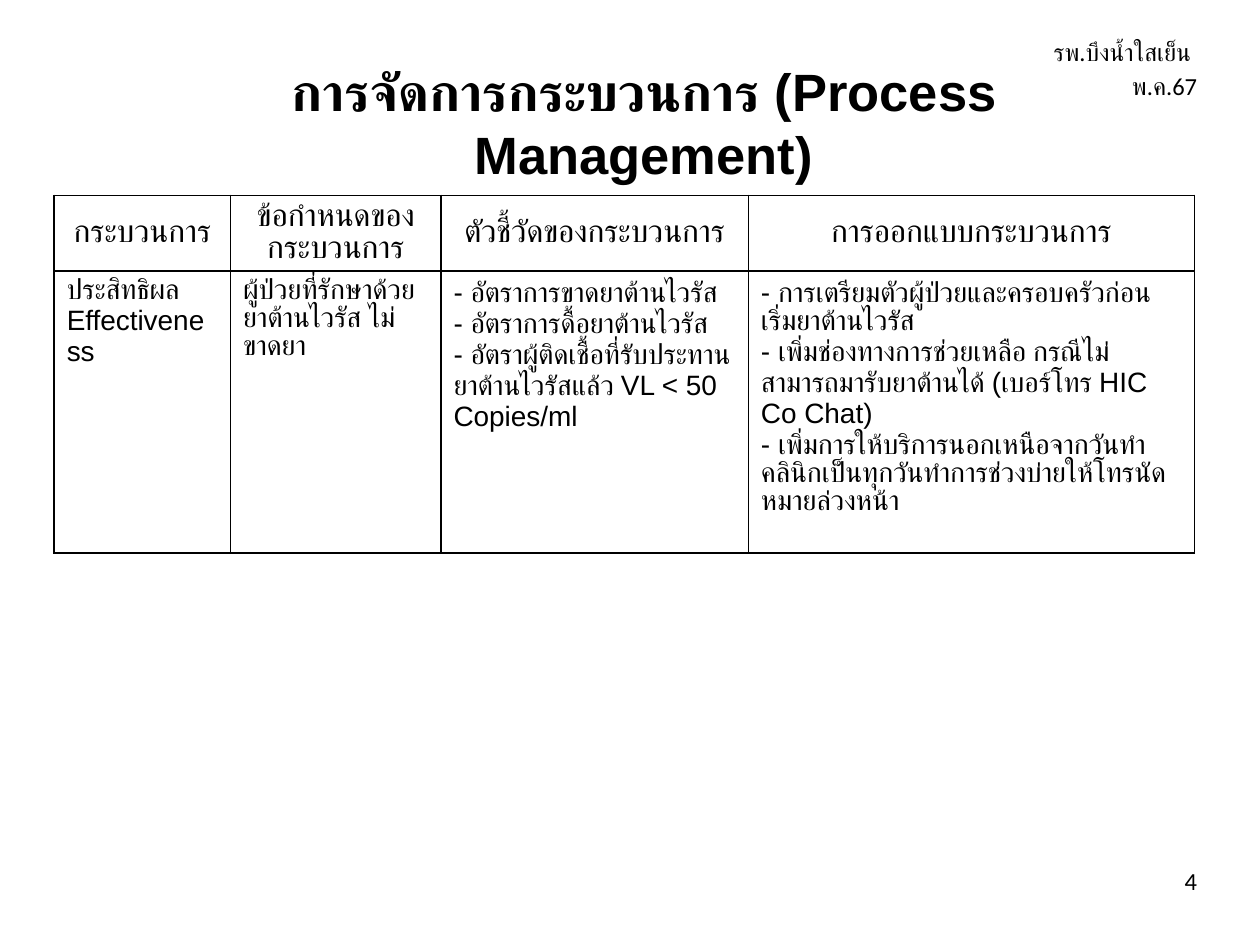
from lxml import etree
from pptx import Presentation
from pptx import util as u
from pptx.dml.color import RGBColor
from pptx.enum import text
from pptx.oxml.ns import qn

COLORS = {"ink": "000000", "paper": "FFFFFF"}
COLUMN_WIDTHS = (1.4, 1.67, 2.44, 3.54)
ROW_HEIGHTS = (0.58, 2.24)
HEADERS = ("กระบวนการ", "ข้อกำหนดของกระบวนการ", "ตัวชี้วัดของกระบวนการ", "การออกแบบกระบวนการ")
DETAILS = (
    ["ประสิทธิผล Effectiveness"],
    ["ผู้ป่วยที่รักษาด้วยยาต้านไวรัส ไม่ขาดยา"],
    ["- อัตราการขาดยาต้านไวรัส",
     "- อัตราการดื้อยาต้านไวรัส",
     "- อัตราผู้ติดเชื้อที่รับประทานยาต้านไวรัสแล้ว VL < 50 Copies/ml"],
    ["- การเตรียมตัวผู้ป่วยและครอบครัวก่อนเริ่มยาต้านไวรัส",
     "- เพิ่มช่องทางการช่วยเหลือ กรณีไม่สามารถมารับยาต้านได้ (เบอร์โทร HIC Co Chat)",
     "- เพิ่มการให้บริการนอกเหนือจากวันทำคลินิกเป็นทุกวันทำการช่วงบ่ายให้โทรนัดหมายล่วงหน้า"],
)


def write(tf, lines, size, align, font="Arial", bold=False):
    """Fill a text frame with one paragraph per line and return them."""
    for i, line in enumerate(lines):
        p = tf.paragraphs[0] if i == 0 else tf.add_paragraph()
        p.alignment = align
        r = p.add_run()
        r.text = line
        r.font.size = u.Pt(size)
        r.font.name = font
        r.font.bold = bold
        r.font.color.rgb = RGBColor.from_string(COLORS["ink"])
    return tf.paragraphs


def set_margins(target, x, y):
    target.margin_left = target.margin_right = u.Inches(x)
    target.margin_top = target.margin_bottom = u.Inches(y)


def add_text_frame(s, box):
    tf = s.shapes.add_textbox(*(u.Inches(v) for v in box)).text_frame
    tf.word_wrap = True
    return tf


def add_title(s, box):
    tf = add_text_frame(s, box)
    set_margins(tf, 0.07, 0.04)
    tf.vertical_anchor = text.MSO_ANCHOR.MIDDLE
    write(tf, ["การจัดการกระบวนการ (Process Management)"], 30, text.PP_ALIGN.CENTER, bold=True)


def add_corner_label(s, box, label):
    tf = add_text_frame(s, box)
    write(tf, [label], 14, text.PP_ALIGN.RIGHT, "Calibri")[0].line_spacing = 1.15


def style_cell(cell):
    """Give a cell a plain fill and a thin line on all four sides."""
    cell.fill.solid()
    cell.fill.fore_color.rgb = RGBColor.from_string(COLORS["paper"])
    tc_pr = cell._tc.get_or_add_tcPr()
    for i, side in enumerate(("a:lnL", "a:lnR", "a:lnT", "a:lnB")):
        ln = etree.Element(qn(side), w=str(u.Pt(1)))
        fill = etree.SubElement(ln, qn("a:solidFill"))
        etree.SubElement(fill, qn("a:srgbClr"), val=COLORS["ink"])
        tc_pr.insert(i, ln)


def add_process_table(s, left, top):
    table = s.shapes.add_table(
        len(ROW_HEIGHTS), len(COLUMN_WIDTHS), u.Inches(left), u.Inches(top),
        u.Inches(sum(COLUMN_WIDTHS)), u.Inches(sum(ROW_HEIGHTS))).table
    table.first_row = table.horz_banding = False
    for row, height in zip(table.rows, ROW_HEIGHTS):
        row.height = u.Inches(height)
    for i, (width, header, details) in enumerate(zip(COLUMN_WIDTHS, HEADERS, DETAILS)):
        table.columns[i].width = u.Inches(width)
        head, body = table.cell(0, i), table.cell(1, i)
        set_margins(head, 0.06, 0)
        head.vertical_anchor = text.MSO_ANCHOR.MIDDLE
        write(head.text_frame, [header], 18, text.PP_ALIGN.CENTER)
        set_margins(body, 0.1, 0.05)
        write(body.text_frame, details, 16, text.PP_ALIGN.LEFT)
        style_cell(head)
        style_cell(body)
    table.cell(1, 1).text_frame.paragraphs[0].space_before = u.Pt(10)


def main():
    prs = Presentation()
    prs.slide_width, prs.slide_height = u.Inches(10), u.Inches(7.5)
    s = prs.slides.add_slide(prs.slide_layouts[6])
    add_title(s, (2.02, 0.68, 6.18, 0.58))
    add_process_table(s, 0.43, 1.55)
    add_corner_label(s, (7.76, 0.21, 1.84, 0.47), "รพ.บึงน้ำใสเย็น  พ.ค.67")
    add_corner_label(s, (8.96, 6.79, 0.64, 0.47), "4")
    prs.save("out.pptx")


if __name__ == "__main__":
    main()
